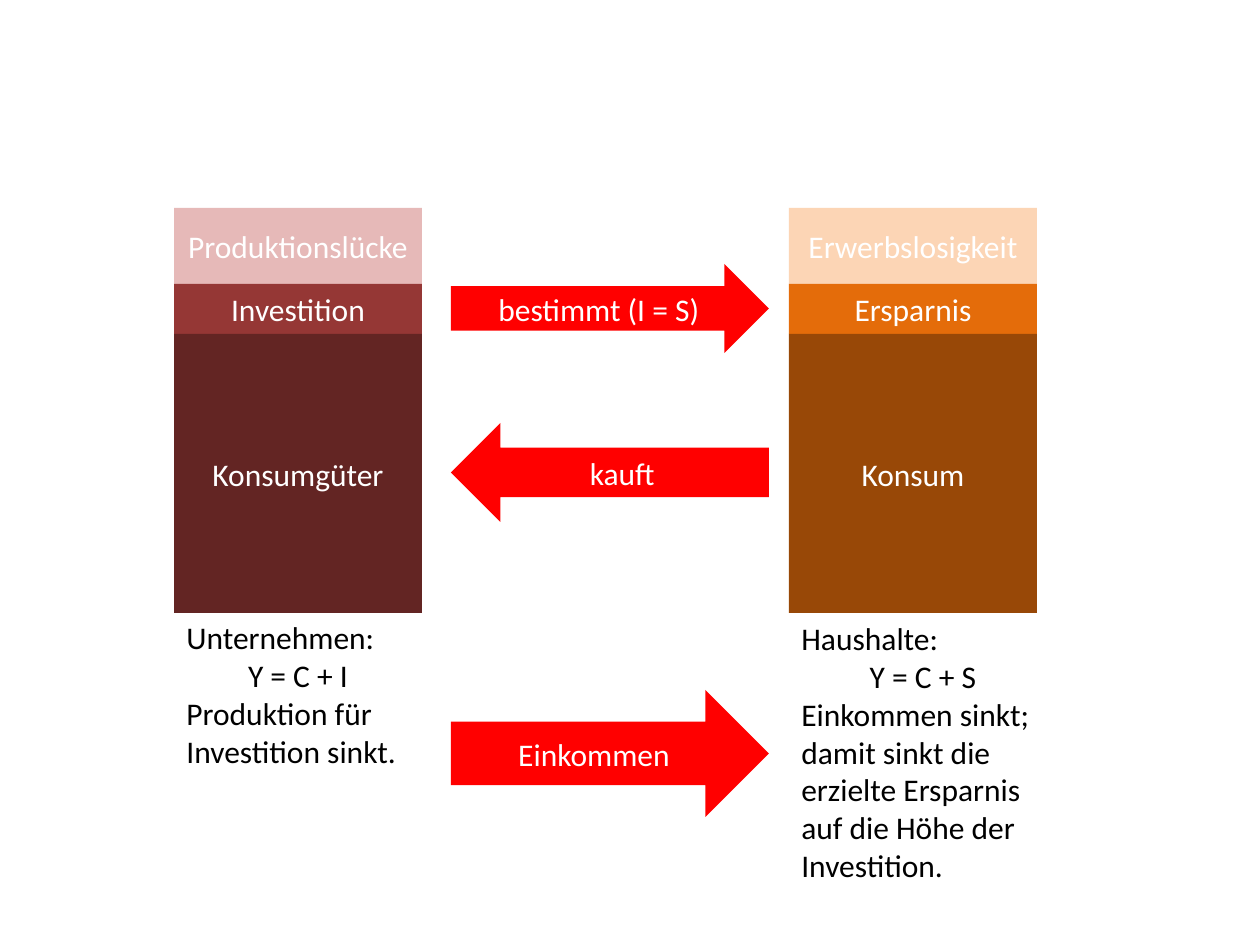
"""Build the slide on investment and saving between firms and households."""
from pptx import Presentation
from pptx.dml.color import RGBColor
from pptx.enum.shapes import MSO_SHAPE
from pptx.enum.text import MSO_ANCHOR, PP_ALIGN
from pptx.util import Emu, Pt

PX = 914400 // 126
BAR_WIDTH = 248
ARROW_LEFT, ARROW_WIDTH = 451, 318
WHITE, BLACK, RED = "FFFFFF", "000000", "FF0000"


def write(paragraph, text, color, alignment):
    paragraph.text = text
    paragraph.alignment = alignment
    font = paragraph.runs[0].font
    font.color.rgb = RGBColor.from_string(color)
    for attribute, value in {"name": "Calibri", "size": Pt(18)}.items():
        setattr(font, attribute, value)


def add_block(kind, box, fill, text):
    block = slide.shapes.add_shape(kind, *[Emu(n * PX) for n in box])
    block.shadow.inherit = False
    block.fill.solid()
    block.fill.fore_color.rgb = RGBColor.from_string(fill)
    block.line.fill.background()
    frame = block.text_frame
    for attribute, value in {"word_wrap": True, "vertical_anchor": MSO_ANCHOR.MIDDLE}.items():
        setattr(frame, attribute, value)
    write(frame.paragraphs[0], text, WHITE, PP_ALIGN.CENTER)


presentation = Presentation()
presentation.slide_width = Emu(1260 * PX)
presentation.slide_height = Emu(945 * PX)
slide = presentation.slides.add_slide(presentation.slide_layouts[6])

levels = [(208, 76), (284, 50), (334, 279)]
sectors = [
    (174, 612, 248, 165,
     [("Produktionslücke", "E6B9B8"), ("Investition", "953735"), ("Konsumgüter", "632523")],
     ["Unternehmen:", "Y = C + I", "Produktion für Investition sinkt."]),
    (789, 613, 268, 280,
     [("Erwerbslosigkeit", "FCD5B5"), ("Ersparnis", "E46C0A"), ("Konsum", "984807")],
     ["Haushalte:", "Y = C + S",
      "Einkommen sinkt; damit sinkt die erzielte Ersparnis auf die Höhe der Investition."]),
]
for left, note_top, note_width, note_height, parts, lines in sectors:
    for (top, height), (label, fill) in zip(levels, parts):
        add_block(MSO_SHAPE.RECTANGLE, (left, top, BAR_WIDTH, height), fill, label)

    note_box = (left, note_top, note_width, note_height)
    note = slide.shapes.add_textbox(*[Emu(n * PX) for n in note_box]).text_frame
    note.word_wrap = True
    alignments = [PP_ALIGN.LEFT, PP_ALIGN.CENTER, PP_ALIGN.LEFT]
    for index, (line, alignment) in enumerate(zip(lines, alignments)):
        paragraph = note.add_paragraph() if index else note.paragraphs[0]
        write(paragraph, line, BLACK, alignment)

flows = [
    (MSO_SHAPE.RIGHT_ARROW, 264, 89, "bestimmt (I = S)"),
    (MSO_SHAPE.LEFT_ARROW, 423, 99, "kauft"),
    (MSO_SHAPE.RIGHT_ARROW, 690, 127, "Einkommen"),
]
for direction, top, height, label in flows:
    add_block(direction, (ARROW_LEFT, top, ARROW_WIDTH, height), RED, label)

presentation.save("out.pptx")
